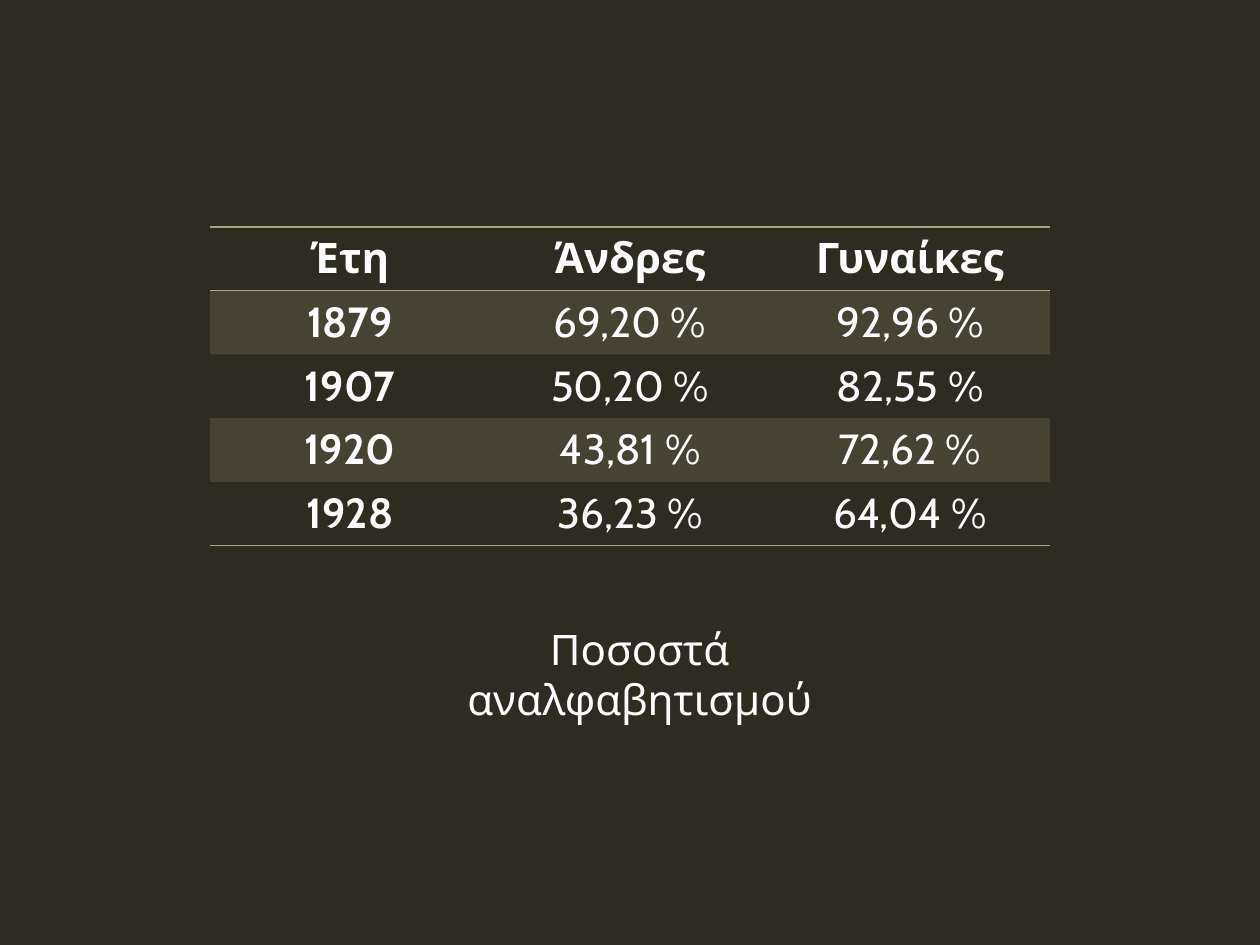
"""Build a slide with a table of illiteracy rates by year and its caption."""
import dataclasses

import lxml.etree
import pptx
import pptx.dml.color
import pptx.enum.text
import pptx.oxml
import pptx.oxml.ns
import pptx.util


@dataclasses.dataclass(frozen=True)
class Theme:
    background: str = "2E2B21"
    accent: str = "A9A57C"
    text: str = "FFFFFF"
    font: str = "Cabin"
    size: int = 24
    line_width: int = 1
    band_opacity: int = 20


THEME = Theme()
PX = 914400 // 126
NO_GRID_STYLE = "{2D5ABB26-0587-4C30-8999-92F81FD0307C}"


def write_text(frame, text, *, bold=False, color=THEME.text, size=THEME.size):
    paragraph = frame.paragraphs[0]
    paragraph.alignment = pptx.enum.text.PP_ALIGN.CENTER
    run = paragraph.add_run()
    run.text = text
    run.font.name = THEME.font
    run.font.size = pptx.util.Pt(size)
    run.font.bold = bold
    run.font.color.rgb = pptx.dml.color.RGBColor.from_string(color)


def add_border(properties, edge, position):
    line = pptx.oxml.parse_xml(
        f'<a:{edge} {pptx.oxml.ns.nsdecls("a")} w="{pptx.util.Pt(THEME.line_width)}">'
        f'<a:solidFill><a:srgbClr val="{THEME.accent}"/></a:solidFill></a:{edge}>'
    )
    properties.insert(position, line)


presentation = pptx.Presentation()
presentation.slide_width = 1260 * PX
presentation.slide_height = 945 * PX
slide = presentation.slides.add_slide(presentation.slide_layouts[6])
slide.background.fill.solid()
slide.background.fill.fore_color.rgb = pptx.dml.color.RGBColor.from_string(THEME.background)

rates = [
    ("Έτη", "Άνδρες", "Γυναίκες"),
    ("1879", "69,20 %", "92,96 %"),
    ("1907", "50,20 %", "82,55 %"),
    ("1920", "43,81 %", "72,62 %"),
    ("1928", "36,23 %", "64,04 %"),
]
last_row = len(rates) - 1
table = slide.shapes.add_table(
    len(rates), len(rates[0]), 210 * PX, 227 * PX, 840 * PX, 315 * PX
).table
table.horz_banding = False
table._tbl.tblPr.find(pptx.oxml.ns.qn("a:tableStyleId")).text = NO_GRID_STYLE

for row_index, row in enumerate(rates):
    for column_index, text in enumerate(row):
        cell = table.cell(row_index, column_index)
        write_text(cell.text_frame, text, bold=row_index == 0 or column_index == 0)
        if row_index % 2:
            cell.fill.solid()
            cell.fill.fore_color.rgb = pptx.dml.color.RGBColor.from_string(THEME.accent)
            color = cell._tc.tcPr.find(".//" + pptx.oxml.ns.qn("a:srgbClr"))
            alpha = lxml.etree.SubElement(color, pptx.oxml.ns.qn("a:alpha"))
            alpha.set("val", str(THEME.band_opacity * 1000))
        else:
            cell.fill.background()
        edges = {0: ("lnT", "lnB"), last_row: ("lnB",)}.get(row_index, ())
        for position, edge in enumerate(edges):
            add_border(cell._tc.tcPr, edge, position)

caption = slide.shapes.add_textbox(372 * PX, 617 * PX, 535 * PX, 63 * PX)
caption.text_frame.word_wrap = True
caption.text_frame.auto_size = pptx.enum.text.MSO_AUTO_SIZE.SHAPE_TO_FIT_TEXT
write_text(caption.text_frame, "Ποσοστά αναλφαβητισμού")

presentation.save("out.pptx")
